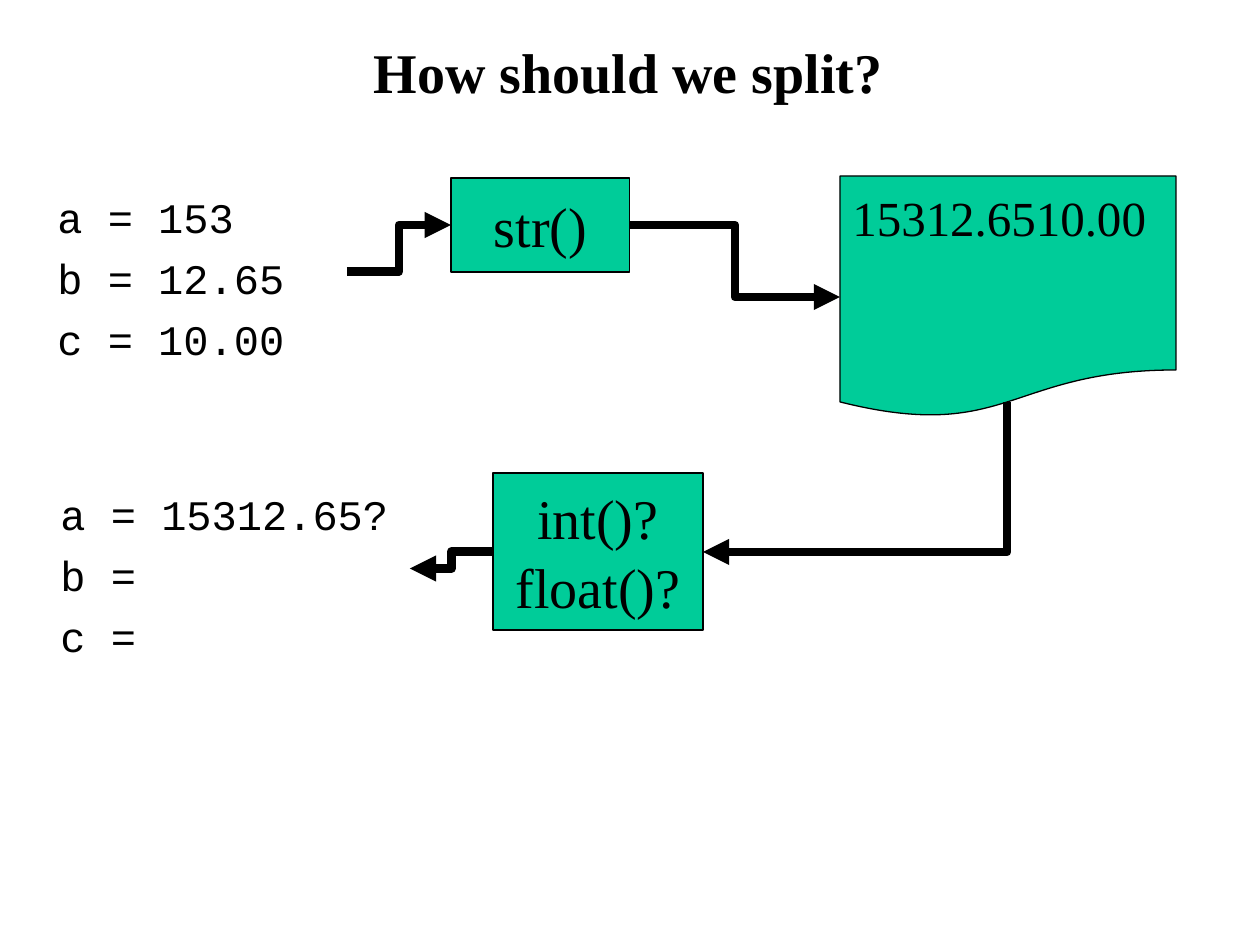
from lxml import etree
from pptx import Presentation
from pptx import util as u
from pptx.dml.color import RGBColor
from pptx.enum import shapes, text
from pptx.oxml.ns import qn

BLACK = RGBColor(0, 0, 0)
GREEN = RGBColor(0, 0xCC, 0x99)
SERIF, MONO = "Times New Roman", "Courier New"
PX = u.Inches(1) // 126
LEFT, RIGHT = 1, 3


def write(box, lines, font=SERIF, size=32, bold=False, align=text.PP_ALIGN.LEFT,
          anchor=text.MSO_ANCHOR.TOP, gap=0, top=6):
    """Fill a shape with one formatted paragraph per line."""
    frame = box.text_frame
    frame.word_wrap = True
    frame.vertical_anchor = anchor
    frame.margin_top = top * PX
    for index, line in enumerate(lines.split("\n")):
        para = frame.add_paragraph() if index else frame.paragraphs[0]
        para.alignment = align
        para.space_before = u.Pt(gap if index else 0)
        span = para.add_run()
        span.text = line
        span.font.name, span.font.size, span.font.bold = font, u.Pt(size), bold
        span.font.color.rgb = BLACK


class Slide:
    """Holds the style and the current page."""

    def __init__(self, deck):
        self.page = deck.slides.add_slide(deck.slide_layouts[5])

    def title(self, words, *place):
        """Place and format the title."""
        box = self.page.shapes.title
        box.left, box.top, box.width, box.height = (n * PX for n in place)
        write(box, words, bold=True, align=text.PP_ALIGN.CENTER, anchor=text.MSO_ANCHOR.MIDDLE)

    def code(self, words, *place):
        """Add a list of assignments."""
        box = self.page.shapes.add_textbox(*(n * PX for n in place))
        write(box, words, font=MONO, size=24, gap=6, top=16)
        return box

    def block(self, kind, words, *place, **style):
        """Add a green shape with text."""
        box = self.page.shapes.add_shape(kind, *(n * PX for n in place))
        box.shadow.inherit = False
        box.fill.solid()
        box.fill.fore_color.rgb = GREEN
        box.line.color.rgb = BLACK
        box.line.width = u.Pt(0.75)
        write(box, words, **style)
        return box

    def arrow(self, *ends):
        """Add a thick elbow arrow."""
        line = self.page.shapes.add_connector(shapes.MSO_CONNECTOR.ELBOW, *(n * PX for n in ends))
        line.line.color.rgb = BLACK
        line.line.width = u.Pt(5)
        etree.SubElement(line.line._get_or_add_ln(), qn("a:tailEnd"), type="triangle")
        etree.SubElement(line._element.spPr, qn("a:effectLst"))
        return line

    def join(self, source, target, start, end):
        """Connect the sides of two shapes."""
        line = self.arrow(0, 0, 0, 0)
        line.begin_connect(source, start)
        line.end_connect(target, end)

    def corner(self, x1, y1, x2, y2):
        """Add an arrow that runs down and then left."""
        x, y = (x1 + x2) // 2, (y1 + y2) // 2
        half_width, half_height = (y2 - y1) // 2, (x1 - x2) // 2
        line = self.arrow(x - half_width, y - half_height, x + half_width, y + half_height)
        properties = line._element.spPr
        properties.find(qn("a:xfrm")).set("rot", str(90 * 60000))
        properties.find(qn("a:prstGeom")).set("prst", "bentConnector2")


def main():
    """Build the slide."""
    deck = Presentation()
    deck.slide_width, deck.slide_height = u.Inches(10), u.Inches(7.5)
    slide = Slide(deck)
    rectangle, document = shapes.MSO_SHAPE.RECTANGLE, shapes.MSO_SHAPE.FLOWCHART_DOCUMENT
    centred = {"align": text.PP_ALIGN.CENTER, "anchor": text.MSO_ANCHOR.MIDDLE}
    slide.title("How should we split?", 93, 8, 1071, 127)
    values = slide.code("a = 153\nb = 12.65\nc = 10.00", 45, 176, 302, 191)
    to_text = slide.block(rectangle, "str()", 451, 178, 179, 94, **centred)
    file = slide.block(document, "15312.6510.00", 840, 176, 336, 242, size=28, top=12)
    result = slide.code("a = 15312.65?\nb =\nc =", 48, 473, 362, 191)
    to_number = slide.block(rectangle, "int()?\nfloat()?", 493, 473, 210, 157, gap=1, **centred)
    slide.join(values, to_text, RIGHT, LEFT)
    slide.join(to_text, file, RIGHT, LEFT)
    slide.corner(1008, 402, 703, 552)
    slide.join(to_number, result, LEFT, RIGHT)
    deck.save("out.pptx")


if __name__ == "__main__":
    main()
